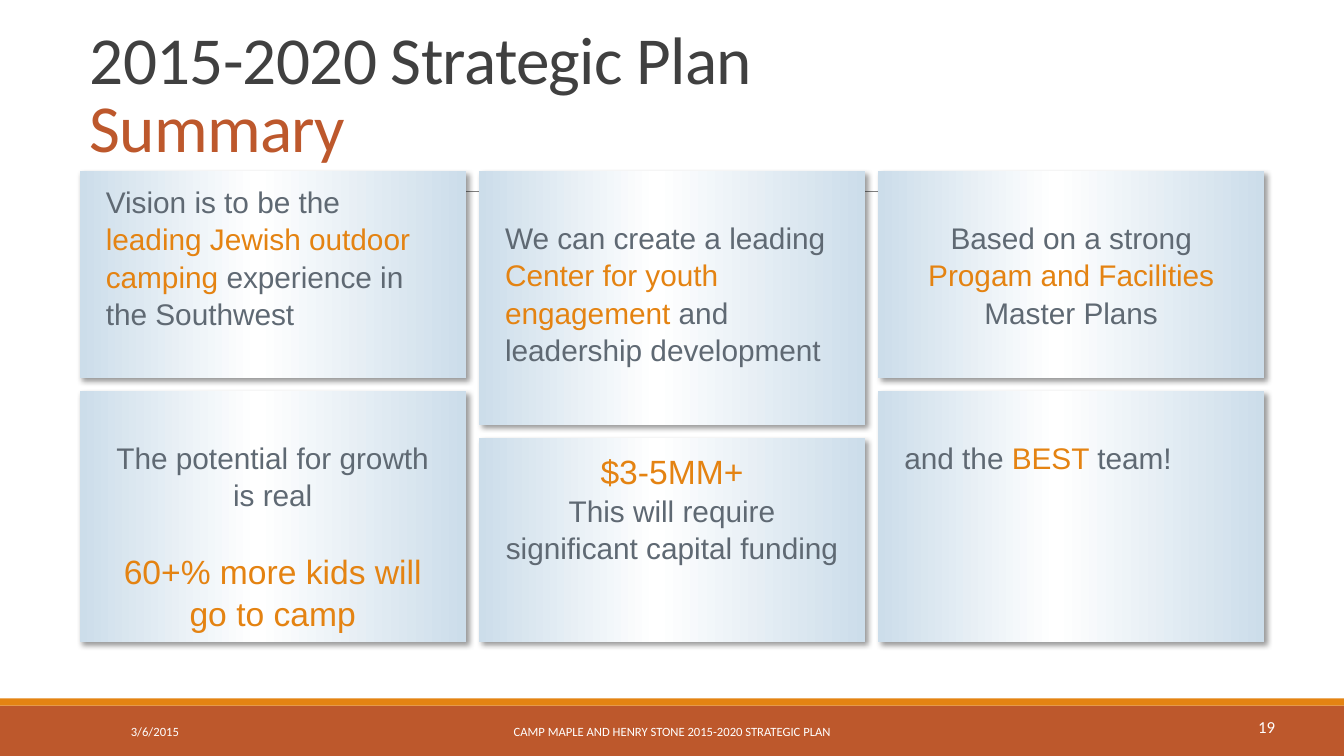
import copy

import pptx
import pptx.dml.color
import pptx.enum.shapes
import pptx.enum.text
import pptx.oxml
import pptx.oxml.ns
import pptx.util

Inches = pptx.util.Inches
Pt = pptx.util.Pt
RGBColor = pptx.dml.color.RGBColor
Align = pptx.enum.text.PP_ALIGN
Anchor = pptx.enum.text.MSO_ANCHOR
qn = pptx.oxml.ns.qn

RUST = RGBColor(0xBD, 0x58, 0x2C)
ORANGE = RGBColor(0xE4, 0x83, 0x12)
CHARCOAL = RGBColor(0x40, 0x40, 0x40)
SLATE = RGBColor(0x5F, 0x69, 0x73)
GRAY = RGBColor(0x80, 0x80, 0x80)
PALE_BLUE = RGBColor(0xCC, 0xDD, 0xEA)
WHITE = RGBColor(0xFF, 0xFF, 0xFF)

CARD_SHADOW = (
    '<a:outerShdw xmlns:a="http://schemas.openxmlformats.org/drawingml/2006/main"'
    ' blurRad="50800" dist="38100" dir="2700000" algn="tl" rotWithShape="0">'
    '<a:srgbClr val="000000"><a:alpha val="40000"/></a:srgbClr></a:outerShdw>'
)
NO_EFFECTS = '<a:effectLst xmlns:a="http://schemas.openxmlformats.org/drawingml/2006/main"/>'


class SummarySlide:
    heading_font = "Calibri"
    card_font = "Arial"
    card_size = 21.3
    card_spacing = 1.05
    blank_line = 0.36

    def __init__(self, slide):
        self.slide = slide

    def add_parts(self, paragraph, parts, font):
        """Each part is (text, size, colour); a None part breaks the line."""
        for part in parts:
            if part is None:
                paragraph.add_line_break()
                continue
            text, size, color = part
            run = paragraph.add_run()
            run.text = text
            run.font.name = font
            run.font.size = Pt(size)
            run.font.color.rgb = color

    def title(self, first_line, second_line):
        heading = self.slide.shapes.title
        heading.left, heading.top = Inches(0.79), Inches(0.11)
        heading.width, heading.height = Inches(11), Inches(1.59)
        frame = heading.text_frame
        frame.vertical_anchor = Anchor.BOTTOM
        frame.auto_size = pptx.enum.text.MSO_AUTO_SIZE.NONE
        paragraph = frame.paragraphs[0]
        paragraph.alignment = Align.LEFT
        paragraph.line_spacing = 0.85
        self.add_parts(paragraph, [(first_line, 48, CHARCOAL), None,
                                   (second_line, 48, RUST)], self.heading_font)
        for run in paragraph.runs:
            run.font._element.set("spc", "-50")

    def rectangle(self, left, top, width, height):
        shape = self.slide.shapes.add_shape(
            pptx.enum.shapes.MSO_SHAPE.RECTANGLE,
            Inches(left), Inches(top), Inches(width), Inches(height))
        shape.shadow.inherit = False
        shape.line.fill.background()
        return shape

    def band(self, top, height, color):
        strip = self.rectangle(0, top, 13.33, height)
        strip.fill.solid()
        strip.fill.fore_color.rgb = color

    def rule(self, left, right, y):
        divider = self.slide.shapes.add_connector(
            pptx.enum.shapes.MSO_CONNECTOR.STRAIGHT,
            Inches(left), Inches(y), Inches(right), Inches(y))
        divider.line.color.rgb = GRAY
        divider.line.width = Pt(0.5)
        divider._element.spPr.append(pptx.oxml.parse_xml(NO_EFFECTS))

    def card(self, left, top, width, height, paragraphs, align, lowered):
        card = self.rectangle(left, top, width, height)

        # Pale edges with a white middle
        card.fill.gradient()
        card.fill.gradient_angle = 0
        for stop, position in zip(card.fill.gradient_stops, (0, 1)):
            stop.color.rgb = PALE_BLUE
            stop.position = position
        stops = card._element.spPr.find(".//" + qn("a:gsLst"))
        stops.insert(1, copy.deepcopy(stops[0]))
        middle = card.fill.gradient_stops[1]
        middle.color.rgb = WHITE
        middle.position = 0.46
        card._element.spPr.find(qn("a:effectLst")).append(pptx.oxml.parse_xml(CARD_SHADOW))

        frame = card.text_frame
        frame.word_wrap = True
        frame.vertical_anchor = Anchor.TOP
        frame.margin_left = frame.margin_right = Inches(0.26)
        frame.margin_top = Inches(0.1 + (self.blank_line if lowered else 0))
        frame.margin_bottom = Inches(0.13)
        for index, parts in enumerate(paragraphs):
            paragraph = frame.add_paragraph() if index else frame.paragraphs[0]
            paragraph.alignment = align
            paragraph.line_spacing = self.card_spacing
            if index:
                paragraph.space_before = Inches(self.blank_line)
            self.add_parts(paragraph, parts, self.card_font)

    def label(self, left, width, height, text, size, align=Align.LEFT,
              anchor=Anchor.MIDDLE, wrap=True):
        box = self.slide.shapes.add_textbox(
            Inches(left), Inches(7.06), Inches(width), Inches(height))
        frame = box.text_frame
        frame.word_wrap = wrap
        frame.vertical_anchor = anchor
        frame.paragraphs[0].alignment = align
        self.add_parts(frame.paragraphs[0], [(text, size, WHITE)], self.heading_font)


def plain(text):
    return text, SummarySlide.card_size, SLATE


def accent(text, size=SummarySlide.card_size):
    return text, size, ORANGE


# Columns of cards: upper height, then (paragraphs, alignment, lowered) for each card
COLUMNS = [
    (2.05, [
        ([[plain("Vision is to be the "), accent("leading Jewish outdoor camping"),
           plain(" experience in the Southwest")]], Align.LEFT, False),
        ([[plain("The potential for growth is real")],
          [accent("60+% more kids will go to camp", 24)]], Align.CENTER, True),
    ]),
    (2.52, [
        ([[plain("We can create a leading "), accent("Center for youth engagement "),
           plain("and leadership development")]], Align.LEFT, True),
        ([[accent("$3-5MM+", 24), None,
           plain("This will require significant capital funding")]], Align.CENTER, False),
    ]),
    (2.05, [
        ([[plain("Based on a strong "), accent("Progam and Facilities "),
           plain("Master Plans")]], Align.CENTER, True),
        ([[plain("and the "), accent("BEST "), plain("team!")]], Align.LEFT, True),
    ]),
]
CARDS_LEFT, CARDS_TOP, CARDS_BOTTOM = 0.79, 1.7, 6.37
CARD_WIDTH, CARD_GAP = 3.83, 0.13


def main():
    deck = pptx.Presentation()
    deck.slide_width, deck.slide_height = Inches(13.33), Inches(7.5)
    summary = SummarySlide(deck.slides.add_slide(deck.slide_layouts[5]))

    # Footer bands, divider and title
    summary.band(7, 0.5, RUST)
    summary.band(6.93, 0.07, ORANGE)
    summary.rule(1.31, 12.21, 1.9)
    summary.title("2015-2020 Strategic Plan", "Summary")

    # Cards
    for column, (upper_height, (upper, lower)) in enumerate(COLUMNS):
        left = CARDS_LEFT + column * (CARD_WIDTH + CARD_GAP)
        lower_top = CARDS_TOP + upper_height + CARD_GAP
        summary.card(left, CARDS_TOP, CARD_WIDTH, upper_height, *upper)
        summary.card(left, lower_top, CARD_WIDTH, CARDS_BOTTOM - lower_top, *lower)

    # Footer text
    summary.label(1.2, 2.7, 0.4, "3/6/2015", 9)
    summary.label(4.03, 5.27, 0.4, "CAMP MAPLE AND HENRY STONE 2015-2020 STRATEGIC PLAN", 9,
                  align=Align.CENTER)
    summary.label(12.38, 0.37, 0.3, "19", 12, anchor=Anchor.TOP, wrap=False)

    deck.save("out.pptx")


if __name__ == "__main__":
    main()
